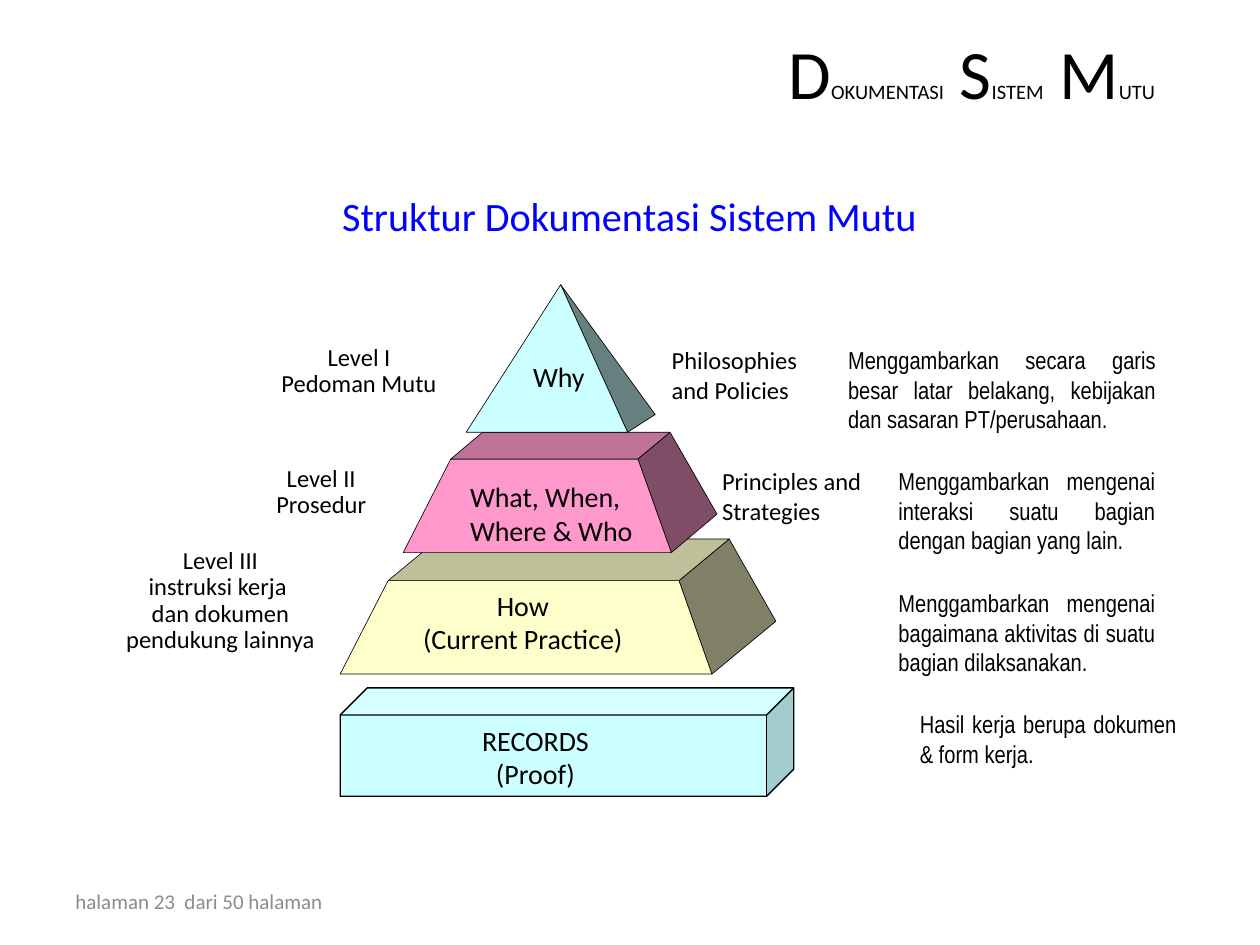
from dataclasses import dataclass

from pptx import Presentation
from pptx.dml.color import RGBColor
from pptx.enum.shapes import MSO_SHAPE
from pptx.enum.text import MSO_ANCHOR, MSO_AUTO_SIZE, PP_ALIGN
from pptx.util import Pt


@dataclass(frozen=True)
class Theme:
    body_font: str = "Calibri"
    narrow_font: str = "Arial Narrow"
    ink: str = "000000"
    heading: str = "0000FF"
    footer: str = "8C8C8C"
    aqua: str = "CCFFFF"
    aqua_side: str = "668080"
    pink: str = "FF99CC"
    pink_side: str = "804D66"
    pink_top: str = "BF7399"
    cream: str = "FFFFCC"
    cream_side: str = "808066"
    cream_top: str = "BFBF99"
    capital_size: float = 39.6
    small_cap_size: float = 11.7
    heading_size: float = 23
    tier_size: float = 16
    label_size: float = 14
    footer_size: float = 12


THEME = Theme()
WIDE_INSET = (9.4, 4.3)
SLIM_INSET = (2.2, 4.3)


def paint(part, fill, line_width):
    part.shadow.inherit = False
    part.fill.solid()
    part.fill.fore_color.rgb = RGBColor.from_string(fill)
    part.line.color.rgb = RGBColor.from_string(THEME.ink)
    part.line.width = Pt(line_width)


def add_face(slide, corners, fill):
    start, *others = [(Pt(x), Pt(y)) for x, y in corners]
    builder = slide.shapes.build_freeform(*start, scale=1.0)
    builder.add_line_segments(others, close=True)
    paint(builder.convert_to_shape(), fill, 0.38)


def add_frustum(slide, front, back, side_fill, front_fill, top_fill):
    """front: four corners from bottom left; back: top left, top right, base right."""
    _, top_left, top_right, base_right = front
    back_left, back_right, back_base = back
    add_face(slide, [base_right, top_right, back_right, back_base], side_fill)
    add_face(slide, front, front_fill)
    add_face(slide, [top_right, back_right, back_left, top_left], top_fill)


def add_text(slide, box, lines, size, align=PP_ALIGN.LEFT, inset=WIDE_INSET,
             font=THEME.body_font, color=THEME.ink, spacing=None,
             anchor=MSO_ANCHOR.TOP, fit=MSO_AUTO_SIZE.SHAPE_TO_FIT_TEXT):
    """lines: a list of lines, each a list of (text, size) runs or a plain string."""
    frame = slide.shapes.add_textbox(*map(Pt, box)).text_frame
    frame.word_wrap = True
    frame.auto_size = fit
    frame.vertical_anchor = anchor
    frame.margin_left = frame.margin_right = Pt(inset[0])
    frame.margin_top = frame.margin_bottom = Pt(inset[1])
    paragraph = frame.paragraphs[0]
    paragraph.alignment = align
    if spacing:
        paragraph.line_spacing = spacing
    for index, line in enumerate(lines):
        if index:
            paragraph.add_line_break()
        for text, run_size in [(line, size)] if isinstance(line, str) else line:
            run = paragraph.add_run()
            run.text = text
            run.font.name = font
            run.font.size = Pt(run_size)
            run.font.color.rgb = RGBColor.from_string(color)


def add_pyramid(slide):
    # Bottom tier
    add_frustum(slide,
                [(194.4, 385.2), (221.8, 331.8), (388, 331.8), (406.8, 385.2)],
                [(250.6, 308), (416.7, 308), (443.4, 355)],
                THEME.cream_side, THEME.cream, THEME.cream_top)
    # Middle tier
    add_frustum(slide,
                [(230.4, 315.8), (257.6, 262.3), (364.5, 262.3), (383.6, 315.8)],
                [(275.8, 247), (382.9, 247), (409.7, 293.8)],
                THEME.pink_side, THEME.pink, THEME.pink_top)
    # Peak
    apex, base_right = (320.4, 162.7), (358.6, 247)
    add_face(slide, [base_right, apex, (374.4, 236.9)], THEME.aqua_side)
    add_face(slide, [(266.4, 247), apex, base_right], THEME.aqua)


def add_records_block(slide):
    records = slide.shapes.add_shape(
        MSO_SHAPE.CUBE, Pt(194.4), Pt(393.1), Pt(259.2), Pt(61.9))
    records.adjustments[0] = 0.25
    paint(records, THEME.aqua, 0.75)


def main():
    deck = Presentation()
    deck.slide_width, deck.slide_height = Pt(720), Pt(540)
    slide = deck.slides.add_slide(deck.slide_layouts[6])

    # Title with small capitals, heading and footer
    title = [("D", "OKUMENTASI"), (" S", "ISTEM"), (" M", "UTU")]
    title_runs = [run for capital, rest in title
                  for run in ((capital, THEME.capital_size),
                              (rest, THEME.small_cap_size))]
    add_text(slide, (57.6, 23, 612, 36), [title_runs], THEME.capital_size,
             PP_ALIGN.RIGHT, anchor=MSO_ANCHOR.MIDDLE, fit=MSO_AUTO_SIZE.NONE)
    add_text(slide, (50.4, 108, 619.2, 30.2), ["Struktur Dokumentasi Sistem Mutu"],
             THEME.heading_size, PP_ALIGN.CENTER, (5.8, 1.4), color=THEME.heading)
    add_text(slide, (36, 500.4, 167.8, 28.8), ["halaman 23  dari 50 halaman"],
             THEME.footer_size, inset=(7.2, 3.6), color=THEME.footer,
             anchor=MSO_ANCHOR.MIDDLE, fit=MSO_AUTO_SIZE.NONE)

    add_pyramid(slide)
    add_records_block(slide)

    # Names on the tiers
    for box, lines, align in [
        ((295.2, 200.9, 57.6, 28.8), ["Why"], PP_ALIGN.LEFT),
        ((259.2, 270, 115.2, 47.5), ["What, When,", "Where & Who"], PP_ALIGN.LEFT),
        ((216, 331.9, 165.6, 47.5), ["How", "(Current Practice)"], PP_ALIGN.CENTER),
        ((237.6, 409, 136.8, 47.5), ["RECORDS", "(Proof)"], PP_ALIGN.CENTER),
    ]:
        add_text(slide, box, lines, THEME.tier_size, align)

    # Document levels on the left
    for box, lines in [
        ((151.2, 193, 108, 39.6), ["Level I", "Pedoman Mutu"]),
        ((136.8, 262.1, 93.6, 39.6), ["Level II", "Prosedur"]),
        ((50.4, 308.9, 151.2, 70.6), ["Level III", "instruksi kerja ",
                                      "dan dokumen", "pendukung lainnya"]),
    ]:
        add_text(slide, box, lines, THEME.label_size, PP_ALIGN.CENTER,
                 SLIM_INSET, spacing=0.9)

    # Purposes beside the upper tiers
    for box, purpose in [
        ((381.6, 193, 86.4, 43.2), "Philosophies and Policies"),
        ((410.4, 262.1, 93.6, 43.2), "Principles and Strategies"),
    ]:
        add_text(slide, box, [purpose], THEME.label_size, inset=SLIM_INSET)

    # Descriptions on the right
    for box, description in [
        ((475.2, 193, 194.8, 60.5), "Menggambarkan secara garis besar latar "
         "belakang, kebijakan dan sasaran PT/perusahaan."),
        ((504, 262.1, 165.6, 60.5), "Menggambarkan mengenai interaksi suatu "
         "bagian dengan bagian yang lain."),
        ((504, 331.9, 165.6, 60.5), "Menggambarkan mengenai bagaimana aktivitas "
         "di suatu bagian dilaksanakan."),
        ((516.2, 401, 165.6, 43.2), "Hasil kerja berupa dokumen & form kerja."),
    ]:
        add_text(slide, box, [description], THEME.label_size, PP_ALIGN.JUSTIFY,
                 font=THEME.narrow_font)

    deck.save("out.pptx")


if __name__ == "__main__":
    main()
